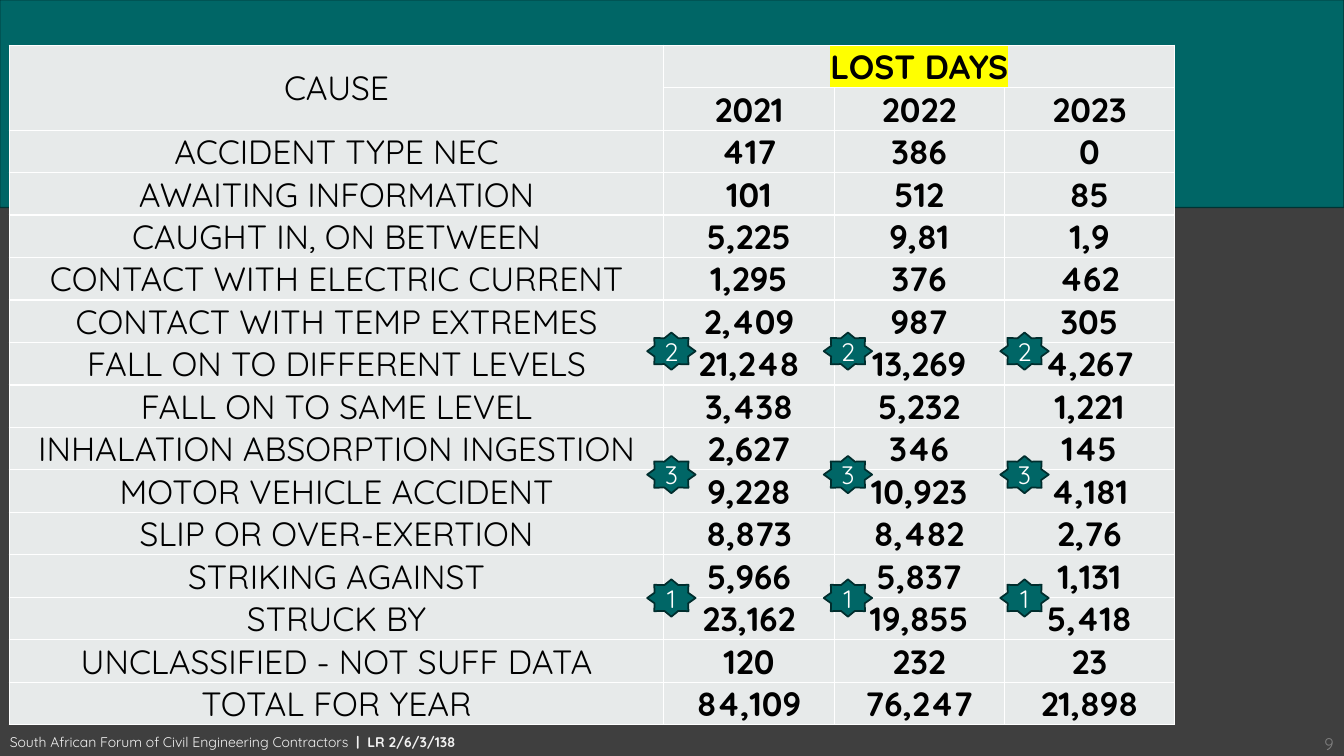
"""Build the slide of days lost by accident cause, 2021 to 2023."""
import dataclasses

import lxml.etree
import pptx
import pptx.dml.color
import pptx.enum.shapes
import pptx.enum.text
import pptx.oxml.ns
import pptx.util

Cm = pptx.util.Cm
Pt = pptx.util.Pt
RGB = pptx.dml.color.RGBColor.from_string
qn = pptx.oxml.ns.qn
ALIGN = pptx.enum.text.PP_ALIGN
ANCHOR = pptx.enum.text.MSO_ANCHOR


@dataclasses.dataclass(frozen=True)
class Theme:
    font: str = "Quicksand"
    background: str = "3F3F3F"
    teal: str = "006666"
    band_line: str = "003333"
    badge_line: str = "002D2D"
    cell: str = "E7EAEA"
    white: str = "FFFFFF"
    black: str = "000000"
    footer: str = "F2F2F2"
    number: str = "808080"
    highlight: str = "FFFF00"
    table_size: int = 24
    badge_size: int = 18
    number_size: int = 12
    footer_size: int = 10


theme = Theme()


def write(tf, text, size, color, bold=False, align=ALIGN.CENTER,
          anchor=ANCHOR.MIDDLE, margins=(0, 0, 0, 0), highlight=None):
    tf.word_wrap = True
    tf.vertical_anchor = anchor
    tf.margin_left, tf.margin_top, tf.margin_right, tf.margin_bottom = map(Cm, margins)
    p = tf.paragraphs[0]
    p.alignment = align
    r = p.add_run()
    r.text = text
    r.font.name = theme.font
    r.font.size = Pt(size)
    r.font.bold = bold
    r.font.color.rgb = RGB(color)
    if highlight:
        mark = lxml.etree.Element(qn("a:highlight"))
        lxml.etree.SubElement(mark, qn("a:srgbClr"), val=highlight)
        r.font.fill._xPr.find(qn("a:solidFill")).addnext(mark)


def style_cell(cell):
    cell.fill.solid()
    cell.fill.fore_color.rgb = RGB(theme.cell)
    tcPr = cell._tc.get_or_add_tcPr()
    for i, side in enumerate(("a:lnL", "a:lnR", "a:lnT", "a:lnB")):
        ln = lxml.etree.Element(qn(side), w=str(Pt(1)))
        fill = lxml.etree.SubElement(ln, qn("a:solidFill"))
        lxml.etree.SubElement(fill, qn("a:srgbClr"), val=theme.white)
        tcPr.insert(i, ln)


prs = pptx.Presentation()
prs.slide_width, prs.slide_height = Cm(33.87), Cm(19.05)
s = prs.slides.add_slide(prs.slide_layouts[6])
s.background.fill.solid()
s.background.fill.fore_color.rgb = RGB(theme.background)

band = [(0, 0), (0, 5.23), (5.54, 5.23), (6.6, 6.05), (6.73, 6.08),
        (6.86, 6.05), (7.9, 5.23), (33.87, 5.23), (33.87, 0)]
points = [(Cm(x), Cm(y)) for x, y in band]
builder = s.shapes.build_freeform(*points[0])
builder.add_line_segments(points[1:], close=True)
sp = builder.convert_to_shape()
sp.shadow.inherit = False
sp.fill.solid()
sp.fill.fore_color.rgb = RGB(theme.teal)
sp.line.color.rgb = RGB(theme.band_line)
sp.line.width = Pt(0.75)

tf = s.shapes.add_textbox(0, Cm(18.36), Cm(12.52), Cm(0.71)).text_frame
for text, bold in (("South African Forum of Civil Engineering Contractors", False),
                   ("  |  LR 2/6/3/138", True)):
    write(tf, text, theme.footer_size, theme.footer, bold=bold, align=ALIGN.LEFT,
          anchor=ANCHOR.TOP, margins=(0.25, 0.13, 0.25, 0.13))

tf = s.shapes.add_textbox(Cm(30.91), Cm(17.65), Cm(2.95), Cm(1.37)).text_frame
write(tf, "9", theme.number_size, theme.number, align=ALIGN.RIGHT,
      anchor=ANCHOR.BOTTOM, margins=(0.25, 0.13, 0.25, 0.03))

rows = [
    ("CAUSE", "LOST DAYS", "", ""),
    ("", "2021", "2022", "2023"),
    ("ACCIDENT TYPE NEC", "417", "386", "0"),
    ("AWAITING INFORMATION", "101", "512", "85"),
    ("CAUGHT IN, ON BETWEEN", "5,225", "9,81", "1,9"),
    ("CONTACT WITH ELECTRIC CURRENT", "1,295", "376", "462"),
    ("CONTACT WITH TEMP EXTREMES", "2,409", "987", "305"),
    ("FALL ON TO DIFFERENT LEVELS", "21,248", "13,269", "4,267"),
    ("FALL ON TO SAME LEVEL", "3,438", "5,232", "1,221"),
    ("INHALATION ABSORPTION INGESTION", "2,627", "346", "145"),
    ("MOTOR VEHICLE ACCIDENT", "9,228", "10,923", "4,181"),
    ("SLIP OR OVER-EXERTION", "8,873", "8,482", "2,76"),
    ("STRIKING AGAINST", "5,966", "5,837", "1,131"),
    ("STRUCK BY", "23,162", "19,855", "5,418"),
    ("UNCLASSIFIED - NOT SUFF DATA", "120", "232", "23"),
    ("TOTAL FOR YEAR", "84,109", "76,247", "21,898"),
]
row_height = 1.07
table = s.shapes.add_table(len(rows), 4, Cm(0.23), Cm(1.14), Cm(29.37),
                           Cm(row_height * len(rows))).table
table.first_row = table.horz_banding = False
for column, width in zip(table.columns, (16.5, 4.29, 4.29, 4.29)):
    column.width = Cm(width)
table.cell(0, 0).merge(table.cell(1, 0))
table.cell(0, 1).merge(table.cell(0, 3))
for i, values in enumerate(rows):
    table.rows[i].height = Cm(row_height)
    for j, text in enumerate(values):
        cell = table.cell(i, j)
        style_cell(cell)
        cell.margin_left = cell.margin_top = cell.margin_right = Cm(0.02)
        cell.margin_bottom = 0
        cell.vertical_anchor = ANCHOR.MIDDLE
        if text:
            write(cell.text_frame, text, theme.table_size, theme.black, bold=j > 0,
                  margins=(0.02, 0.02, 0.02, 0),
                  highlight=theme.highlight if text == "LOST DAYS" else None)

for i, rank in enumerate("231"):
    for j in range(3):
        sp = s.shapes.add_shape(pptx.enum.shapes.MSO_SHAPE.STAR_8_POINT,
                                Cm(16.31 + 4.45 * j), Cm(8.38 + 3.11 * i),
                                Cm(1.22), Cm(0.94))
        sp.shadow.inherit = False
        sp.fill.solid()
        sp.fill.fore_color.rgb = RGB(theme.teal)
        sp.line.color.rgb = RGB(theme.badge_line)
        sp.line.width = Pt(1.25)
        write(sp.text_frame, rank, theme.badge_size, theme.white)

prs.save("out.pptx")
